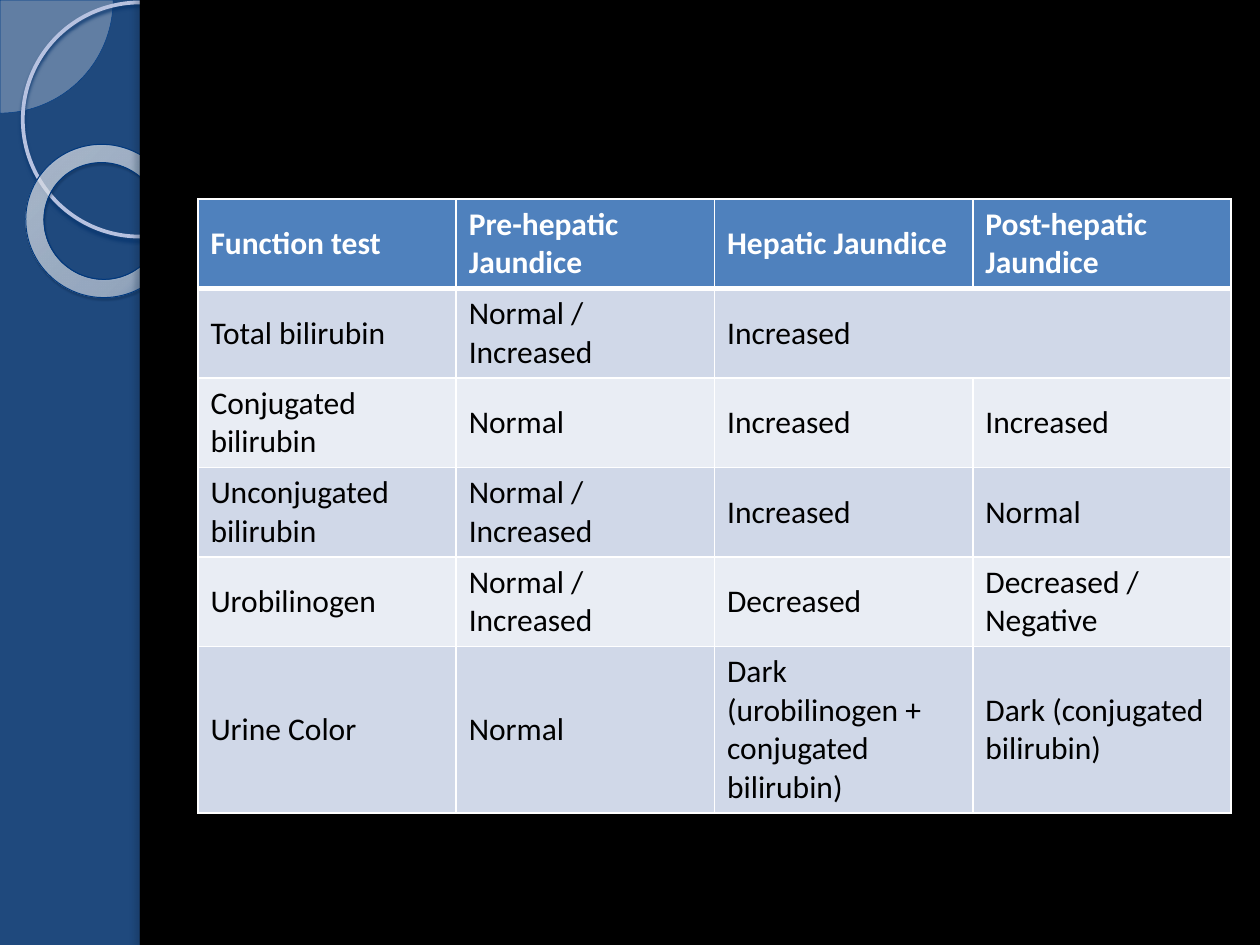
from dataclasses import dataclass

from lxml import etree
from pptx import Presentation
from pptx.dml.color import RGBColor
from pptx.enum.shapes import MSO_SHAPE
from pptx.enum.text import MSO_ANCHOR, PP_ALIGN
from pptx.oxml.ns import qn
from pptx.util import Cm, Pt

PIE, OVAL, DONUT, RECT = (MSO_SHAPE.PIE, MSO_SHAPE.OVAL,
                          MSO_SHAPE.DONUT, MSO_SHAPE.RECTANGLE)
MIDDLE, LEFT = MSO_ANCHOR.MIDDLE, PP_ALIGN.LEFT
BLANK_LAYOUT = 6


@dataclass(frozen=True)
class Theme:
    font: str = "Calibri"
    size: int = 18
    background: str = "1F497D"
    panel: str = "000000"
    pie: str = "E8EAF1"
    pie_line: str = "003C86"
    ring_line: str = "B7C2E0"
    donut_line: str = "00387D"
    # Gradient stops: position, colour and opacity in percent
    donut_stops: tuple = ((0, "F0F2F8", 70), (70, "F6F8FB", 55), (100, "003E8A", 60))
    # Shadows: colour, opacity in percent, blur and distance in points, angle
    ring_shadow: tuple = ("06346E", 85, 2, 2, 90)
    donut_shadow: tuple = ("001A39", 35, 1, 1.2, 75)
    edge_shadow: tuple = ("0D2440", 25, 3, 3, 180)
    border: str = "FFFFFF"
    header_fill: str = "4F81BD"
    header_text: str = "FFFFFF"
    body_text: str = "000000"
    bands: tuple = ("D0D8E8", "E9EDF4")


THEME = Theme()
HEADER = ("Function test", "Pre-hepatic Jaundice", "Hepatic Jaundice",
          "Post-hepatic Jaundice")
RESULTS = (
    ("Total bilirubin", "Normal / Increased", "Increased", None),
    ("Conjugated bilirubin", "Normal", "Increased", "Increased"),
    ("Unconjugated bilirubin", "Normal / Increased", "Increased", "Normal"),
    ("Urobilinogen", "Normal / Increased", "Decreased", "Decreased / Negative"),
    ("Urine Color", "Normal", "Dark (urobilinogen + conjugated bilirubin)",
     "Dark (conjugated bilirubin)"),
)


def add_node(parent, tag, **values):
    """Append a drawing element with its attributes."""
    return etree.SubElement(parent, qn(tag), {k: str(v) for k, v in values.items()})


def add_color(parent, color, opacity=100):
    node = add_node(parent, "a:srgbClr", val=color)
    if opacity < 100:
        add_node(node, "a:alpha", val=opacity * 1000)


def paint(fill, color):
    fill.solid()
    fill.fore_color.rgb = RGBColor.from_string(color)


def add_figure(page, kind, box, fill=None, line=None, shadow=None):
    """Add a shape; line is (colour, points), shadow as in the theme."""
    shape = page.shapes.add_shape(kind, *(Cm(length) for length in box))
    shape.shadow.inherit = False
    if fill:
        paint(shape.fill, fill)
    else:
        shape.fill.background()
    if line:
        paint(shape.line.fill, line[0])
        shape.line.width = Pt(line[1])
    else:
        shape.line.fill.background()
    if shadow:
        color, opacity, blur, distance, angle = shadow
        effects = shape._element.spPr.find(qn("a:effectLst"))
        node = add_node(effects, "a:outerShdw", blurRad=Pt(blur), dist=Pt(distance),
                        dir=angle * 60000, algn="tl", rotWithShape=0)
        add_color(node, color, opacity)
    return shape


def fill_radial(shape, stops):
    """Give the shape a circular gradient centred far to the left."""
    shape.fill.gradient()
    gradient = shape._element.spPr.find(qn("a:gradFill"))
    for child in list(gradient):
        gradient.remove(child)
    stop_list = add_node(gradient, "a:gsLst")
    for position, color, opacity in stops:
        add_color(add_node(stop_list, "a:gs", pos=position * 1000), color, opacity)
    route = add_node(gradient, "a:path", path="circle")
    add_node(route, "a:fillToRect", l=-408000, t=-50000, r=508000, b=150000)


def add_ornaments(page, left, top):
    """Quarter disc, thin ring and donut in the top corner."""
    disc = add_figure(page, PIE, (left - 2.27, top - 2.27, 4.55, 4.55),
                      THEME.pie, (THEME.pie_line, 0.25))
    disc.adjustments[0], disc.adjustments[1] = 0, 54.02
    color = disc._element.spPr.find(qn("a:solidFill"))[0]
    add_node(color, "a:alpha", val=33000)

    add_figure(page, OVAL, (left + 0.46, top + 0.05, 4.72, 4.72),
               line=(THEME.ring_line, 2.15), shadow=THEME.ring_shadow)

    donut = add_figure(page, DONUT, (left + 0.51, top + 2.92, 3.12, 3.07),
                       line=(THEME.donut_line, 0.58), shadow=THEME.donut_shadow)
    donut.adjustments[0] = 0.12
    donut.rotation = 38.6
    fill_radial(donut, THEME.donut_stops)


def add_panel(page, left, top, width, height):
    """Dark content area with a shaded left edge."""
    add_figure(page, RECT, (left, top, width, height), THEME.panel)
    add_figure(page, RECT, (left, top, 0.2, height), THEME.panel,
               shadow=THEME.edge_shadow)


def set_borders(cell, top, bottom):
    properties = cell._tc.get_or_add_tcPr()
    for tag, width in (("a:lnL", 1), ("a:lnR", 1), ("a:lnT", top), ("a:lnB", bottom)):
        line = add_node(properties, tag, w=Pt(width))
        add_color(add_node(line, "a:solidFill"), THEME.border)


def write_cell(cell, text, color, bold):
    cell.vertical_anchor = MIDDLE
    para = cell.text_frame.paragraphs[0]
    para.alignment = LEFT
    span = para.add_run()
    span.text = text
    span.font.color.rgb = RGBColor.from_string(color)
    formats = {"name": THEME.font, "size": Pt(THEME.size), "bold": bold}
    for name, value in formats.items():
        setattr(span.font, name, value)


def add_results(page, left, top, width, row_heights):
    """Table of test results; None joins a cell to the one on its left."""
    rows = (HEADER, *RESULTS)
    frame = page.shapes.add_table(len(rows), len(HEADER), Cm(left), Cm(top),
                                  Cm(width), Cm(sum(row_heights)))
    table = frame.table
    for column in table.columns:
        column.width = Cm(width / len(HEADER))
    for i, (texts, height) in enumerate(zip(rows, row_heights)):
        table.rows[i].height = Cm(height)
        header = i == 0
        fill = THEME.header_fill if header else THEME.bands[(i - 1) % 2]
        color = THEME.header_text if header else THEME.body_text
        for j, text in enumerate(texts):
            cell = table.cell(i, j)
            set_borders(cell, top=3 if i == 1 else 1, bottom=3 if header else 1)
            paint(cell.fill, fill)
            if text is None:
                table.cell(i, j - 1).merge(cell)
            else:
                write_cell(cell, text, color, header)


def main():
    deck = Presentation()
    deck.slide_width, deck.slide_height = Cm(25.4), Cm(19.05)
    page = deck.slides.add_slide(deck.slide_layouts[BLANK_LAYOUT])
    paint(page.background.fill, THEME.background)
    add_ornaments(page, 0, 0)
    add_panel(page, 2.82, 0, 22.58, 19.05)
    add_results(page, 3.99, 4.01, 20.83, [1.8] * 5 + [3.35])
    deck.save("out.pptx")


if __name__ == "__main__":
    main()
